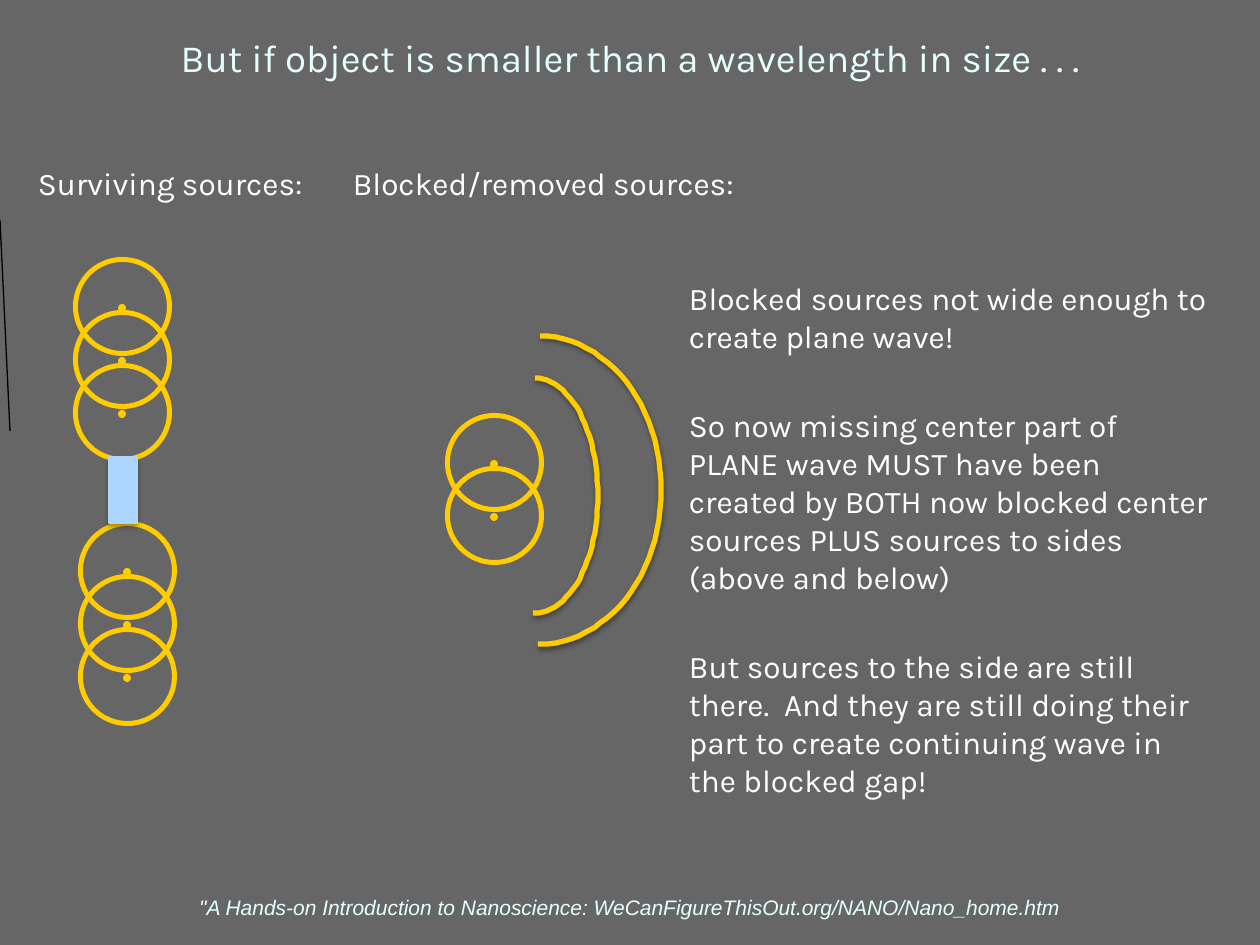
from math import cos, pi, sin

from lxml import etree
from pptx import Presentation
from pptx.dml.color import RGBColor
from pptx.enum.shapes import MSO_CONNECTOR, MSO_SHAPE
from pptx.enum.text import MSO_ANCHOR, PP_ALIGN
from pptx.oxml import parse_xml
from pptx.util import Emu, Pt

LEFT, CENTER = PP_ALIGN.LEFT, PP_ALIGN.CENTER
TOP, MIDDLE, BOTTOM = MSO_ANCHOR.TOP, MSO_ANCHOR.MIDDLE, MSO_ANCHOR.BOTTOM
OVAL, DONUT, RECT = MSO_SHAPE.OVAL, MSO_SHAPE.DONUT, MSO_SHAPE.RECTANGLE
SCALE = 914400 / 126  # EMU per px
NS = "http://schemas.openxmlformats.org/drawingml/2006/main"
GOLD, SKY, PALE, WHITE = "FFCC00", "ADD6FF", "E5FFFF", "FFFFFF"
rgb = RGBColor.from_string

deck = Presentation()
deck.slide_width, deck.slide_height = Emu(9144000), Emu(6858000)
slide = deck.slides.add_slide(deck.slide_layouts[6])
slide.background.fill.solid()
slide.background.fill.fore_color.rgb = rgb("666666")
shapes = slide.shapes


def box(*px):
    return [Emu(round(n * SCALE)) for n in px]


def text(*paras, at, size=18, font="Karla", color=WHITE, align=LEFT,
         anchor=TOP, italic=False, gap=0):
    frame = shapes.add_textbox(*box(*at)).text_frame
    frame.word_wrap = True
    frame.vertical_anchor = anchor
    frame.margin_left, frame.margin_top, frame.margin_right, frame.margin_bottom = box(6, 6, 6, 6)
    for i, words in enumerate(paras):
        para = frame.paragraphs[0] if i == 0 else frame.add_paragraph()
        para.alignment = align
        if i:
            para.space_before = Pt(gap)
        run = para.add_run()
        run.text = words
        run.font.name, run.font.size = font, Pt(size)
        run.font.italic = italic
        run.font.color.rgb = rgb(color)


# Footer, title and headings
text('"A Hands-on Introduction to Nanoscience: WeCanFigureThisOut.org/NANO/Nano_home.htm',
     at=(42, 890, 1176, 36), size=12, font="Arial", color=PALE,
     align=CENTER, anchor=BOTTOM, italic=True)
text("But if object is smaller than a wavelength in size . . .",
     at=(42, 10, 1176, 95), size=22, color=PALE, align=CENTER, anchor=MIDDLE)
text("Surviving sources:\tBlocked/removed sources:", at=(32, 158, 1187, 126))

# Thin line at the left edge
edge = shapes.add_connector(MSO_CONNECTOR.STRAIGHT, *box(0, 220, 10, 431))
edge.line.color.rgb = rgb("000000")
edge.line.width = Pt(0.75)
etree.SubElement(edge._element.spPr, f"{{{NS}}}effectLst")

# Wave sources: a dot inside a ring, stacked
for left, top, count in ((73, 257, 3), (78, 521, 3), (445, 413, 2)):
    for i in range(count):
        y = top + 53 * i
        dot = shapes.add_shape(OVAL, *box(left + 45, y + 47, 8, 8))
        ring = shapes.add_shape(DONUT, *box(left, y, 99, 99))
        ring.adjustments[0] = 0.05
        for part in (dot, ring):
            part.shadow.inherit = False
            part.fill.solid()
            part.fill.fore_color.rgb = rgb(GOLD)
            part.line.fill.background()

# Blocking object
block = shapes.add_shape(RECT, *box(109, 457, 28, 66))
block.fill.solid()
block.fill.fore_color.rgb = rgb(SKY)
block.line.color.rgb = rgb(SKY)
block.line.width = Pt(0.75)
shaded = [(block, 35, 1.8)]

# Wave fronts: half ellipses with a short tail at the foot
for x, y, wide, high in ((535, 378, 63, 235), (540, 336, 121, 308)):
    half = high / 2
    turns = [pi * i / 48 for i in range(49)]
    points = [(x + wide * sin(a), y + half - half * cos(a)) for a in turns]
    pen = shapes.build_freeform(*points[0], scale=SCALE)
    pen.add_line_segments(points[1:] + [(x - 2, y + high)], close=False)
    front = pen.convert_to_shape()
    front.fill.background()
    front.line.color.rgb = rgb(GOLD)
    front.line.width = Pt(3)
    shaded.append((front, 38, 1.6))

# Soft shadows
for item, alpha, dist in shaded:
    item._element.spPr.append(parse_xml(
        f'<a:effectLst xmlns:a="{NS}"><a:outerShdw blurRad="{Pt(3)}" dist="{Pt(dist)}" '
        f'dir="5400000" rotWithShape="0"><a:srgbClr val="000000">'
        f'<a:alpha val="{alpha * 1000}"/></a:srgbClr></a:outerShdw></a:effectLst>'))

# Explanation
text("Blocked sources not wide enough to create plane wave!",
     "So now missing center part of PLANE wave MUST have been created by BOTH now "
     "blocked center sources PLUS sources to sides (above and below)",
     "But sources to the side are still there.  And they are still doing their part "
     "to create continuing wave in the blocked gap!",
     at=(683, 273, 536, 543), gap=29.6)

deck.save("out.pptx")
